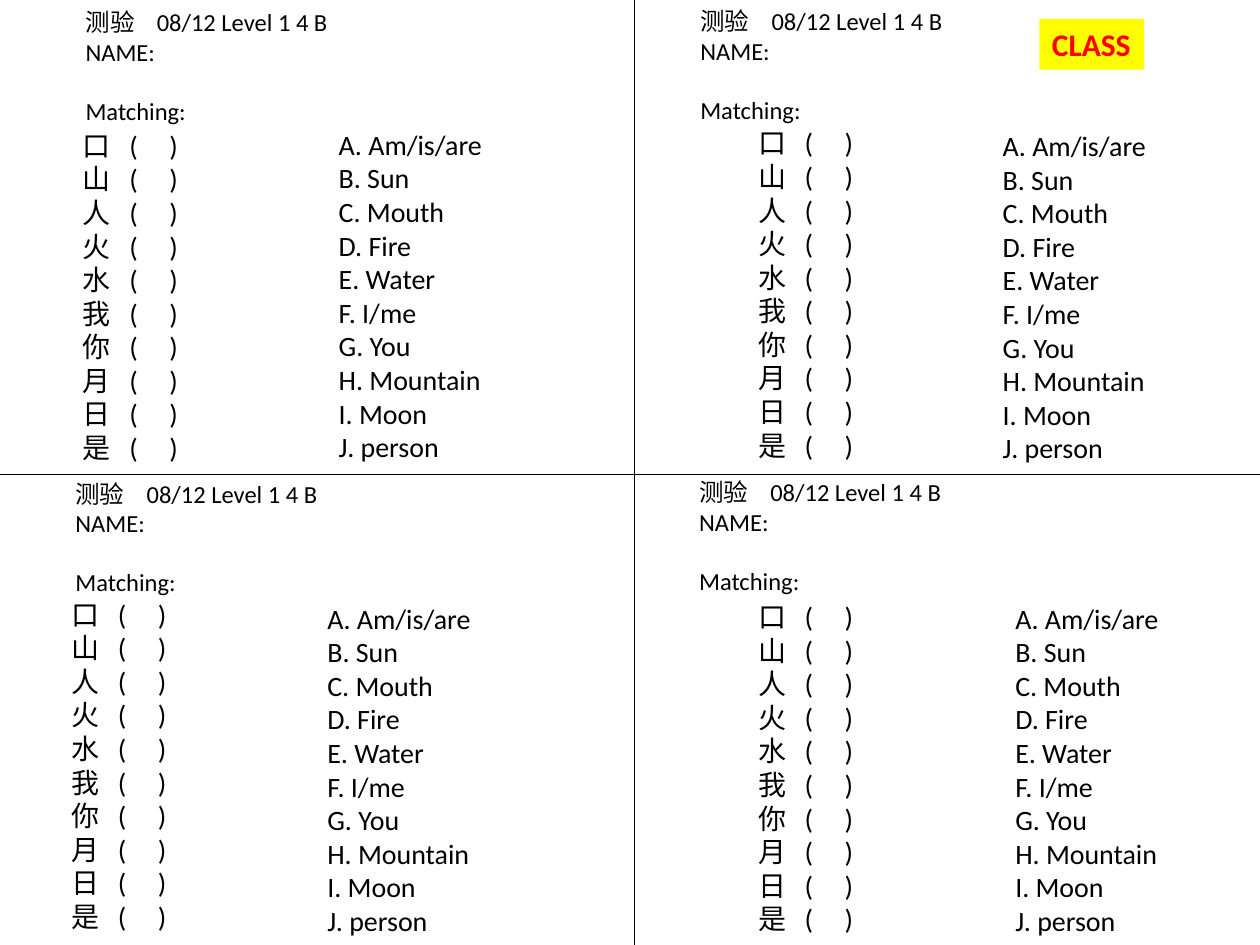
from lxml.etree import SubElement
from pptx import Presentation
from pptx.dml.color import RGBColor
from pptx.enum.shapes import MSO_CONNECTOR, MSO_SHAPE
from pptx.enum.text import MSO_ANCHOR, PP_ALIGN
from pptx.oxml.ns import qn
from pptx.util import Pt

COLOURS = {"ink": "000000", "label": "FF0000", "highlight": "FFFF00"}
CHARACTERS = "口山人火水我你月日是"
MEANINGS = ["Am/is/are", "Sun", "Mouth", "Fire", "Water",
            "I/me", "You", "Mountain", "Moon", "person"]
HEADING = ["测验\t08/12 Level 1 4 B", "NAME:", "Matching:"]

# Left and top of the heading, characters and meanings in each quarter
QUARTERS = [
    ((41.8, 0.7), (40.3, 69.8), (186.5, 49.7)),
    ((393.1, 0), (426.2, 68.4), (565.9, 50.4)),
    ((36, 270), (33.8, 337.7), (180, 320.4)),
    ((392.4, 269.3), (426.2, 339.1), (573.1, 320.4)),
]


class QuizSheet:
    """Style of the quiz and the page it is drawn on."""

    font = "Calibri"

    def __init__(self, page):
        self.page = page

    def colour(self, name):
        return RGBColor.from_string(COLOURS[name])

    def style(self, para, size, colour="ink", bold=False):
        para.font.name = self.font
        para.font.size = Pt(size)
        para.font.bold = bold
        para.font.color.rgb = self.colour(colour)

    def add_tabs(self, para, stops):
        tabs = SubElement(para._p.get_or_add_pPr(), qn("a:tabLst"))
        for stop in stops:
            SubElement(tabs, qn("a:tab"), pos=str(Pt(stop)), algn="l")

    def text(self, position, width, height, lines, size, stops=(), top_gap=0):
        left, top = position
        box = self.page.shapes.add_textbox(Pt(left), Pt(top), Pt(width), Pt(height))
        frame = box.text_frame
        frame.word_wrap = True
        frame.margin_top = Pt(3.6 + top_gap)
        for index, line in enumerate(lines):
            para = frame.add_paragraph() if index else frame.paragraphs[0]
            para.text = line
            if stops:
                self.add_tabs(para, stops)
            self.style(para, size)
        return frame

    def line(self, x1, y1, x2, y2):
        line = self.page.shapes.add_connector(
            MSO_CONNECTOR.STRAIGHT, Pt(x1), Pt(y1), Pt(x2), Pt(y2))
        line.line.color.rgb = self.colour("ink")
        line.line.width = Pt(0.75)
        SubElement(line._element.spPr, qn("a:effectLst"))

    def label(self, left, top, width, height, words):
        box = self.page.shapes.add_shape(
            MSO_SHAPE.RECTANGLE, Pt(left), Pt(top), Pt(width), Pt(height))
        box.shadow.inherit = False
        box.fill.solid()
        box.fill.fore_color.rgb = self.colour("highlight")
        box.line.fill.background()
        frame = box.text_frame
        frame.word_wrap = False
        frame.vertical_anchor = MSO_ANCHOR.TOP
        para = frame.paragraphs[0]
        para.text = words
        para.alignment = PP_ALIGN.LEFT
        self.style(para, 18, "label", bold=True)

    def quiz(self, heading_at, characters_at, meanings_at):
        heading = self.text(heading_at, 720, 90, HEADING, 14, stops=[40.7])
        heading.paragraphs[-1].space_before = Pt(17)
        blanks = [f"{character}\t(\t)" for character in CHARACTERS]
        self.text(characters_at, 462, 201, blanks, 16, stops=[26.5, 49.4])
        choices = [f"{letter}. {meaning}"
                   for letter, meaning in zip("ABCDEFGHIJ", MEANINGS)]
        self.text(meanings_at, 462, 220, choices, 16, top_gap=19.5)


def main():
    deck = Presentation()
    deck.slide_width, deck.slide_height = Pt(720), Pt(540)
    sheet = QuizSheet(deck.slides.add_slide(deck.slide_layouts[6]))

    # Four copies of the quiz
    for quarter in QUARTERS:
        sheet.quiz(*quarter)

    # Cutting lines
    sheet.line(-3, 271.2, 720, 271.2)
    sheet.line(362.4, -8, 362.4, 550)

    # Class label
    sheet.label(594, 10.8, 59.8, 29, "CLASS")

    deck.save("out.pptx")


if __name__ == "__main__":
    main()
